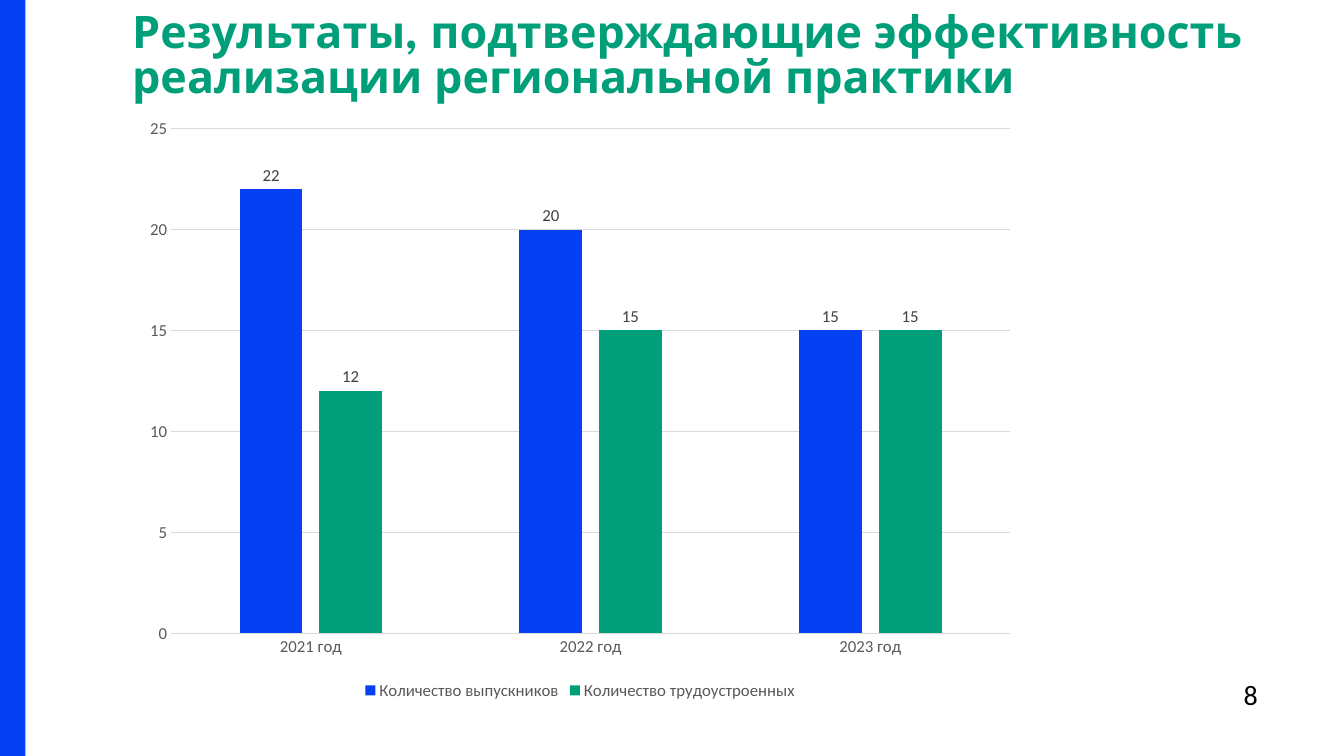
from dataclasses import dataclass

from pptx import Presentation
from pptx import util as u
from pptx.chart.data import CategoryChartData
from pptx.dml.color import RGBColor
from pptx.enum import chart as ch, shapes, text

HUES = {
    "blue": "0540F2",
    "green": "009F79",
    "grid": "D9D9D9",
    "axis": "595959",
    "label": "404040",
    "black": "000000",
}
YEARS = ["2021 год", "2022 год", "2023 год"]


@dataclass
class Row:
    name: str
    vals: list[int]
    hue: str


ROWS = [
    Row("Количество выпускников", [22, 20, 15], "blue"),
    Row("Количество трудоустроенных", [12, 15, 15], "green"),
]


def tint(hue: str) -> RGBColor:
    return RGBColor.from_string(HUES[hue])


def style(font, size: float, hue: str, face: str = "Calibri", bold: bool = False) -> None:
    font.size = u.Pt(size)
    font.name = face
    font.bold = bold
    font.color.rgb = tint(hue)


def paint(fill, hue: str) -> None:
    fill.solid()
    fill.fore_color.rgb = tint(hue)


def rule(line) -> None:
    line.color.rgb = tint("grid")
    line.width = u.Pt(0.75)


def write(box, words: str, *, size: float, hue: str, face: str = "Calibri",
          bold: bool = False, wrap: bool = True, pad: float | None = None,
          lead: float | None = None) -> None:
    frame = box.text_frame
    frame.word_wrap = wrap
    frame.auto_size = text.MSO_AUTO_SIZE.NONE if wrap else text.MSO_AUTO_SIZE.SHAPE_TO_FIT_TEXT
    frame.vertical_anchor = text.MSO_ANCHOR.TOP
    if pad is not None:
        frame.margin_left = frame.margin_right = u.Cm(pad)
        frame.margin_top = frame.margin_bottom = u.Cm(pad)
    para = frame.paragraphs[0]
    para.alignment = text.PP_ALIGN.LEFT
    if lead:
        para.line_spacing = u.Pt(lead)
    run = para.add_run()
    run.text = words
    style(run.font, size, hue, face, bold)


def plot(slide, rows: list[Row]) -> None:
    data = CategoryChartData()
    data.categories = YEARS
    for row in rows:
        data.add_series(row.name, row.vals)
    chart = slide.shapes.add_chart(
        ch.XL_CHART_TYPE.COLUMN_CLUSTERED,
        u.Cm(3.33), u.Cm(2.69), u.Cm(22.58), u.Cm(15.06), data).chart
    style(chart.font, 10, "black")
    chart.has_title = False

    # Legend
    chart.has_legend = True
    chart.legend.position = ch.XL_LEGEND_POSITION.BOTTOM
    chart.legend.include_in_layout = False
    style(chart.legend.font, 12, "axis")

    # Axes
    for axis in (chart.category_axis, chart.value_axis):
        axis.major_tick_mark = axis.minor_tick_mark = ch.XL_TICK_MARK.NONE
        style(axis.tick_labels.font, 12, "axis")
    rule(chart.category_axis.format.line)
    scale = chart.value_axis
    scale.minimum_scale, scale.maximum_scale, scale.major_unit = 0, 25, 5
    scale.format.line.fill.background()
    rule(scale.major_gridlines.format.line)

    # Columns and their labels
    bars = chart.plots[0]
    bars.gap_width, bars.overlap = 219, -27
    bars.vary_by_categories = False
    for item, row in zip(bars.series, rows):
        paint(item.format.fill, row.hue)
        item.invert_if_negative = False
        tags = item.data_labels
        tags.show_value = True
        tags.position = ch.XL_LABEL_POSITION.OUTSIDE_END
        style(tags.font, 12, "label")


def main() -> None:
    deck = Presentation()
    deck.slide_width, deck.slide_height = u.Cm(33.87), u.Cm(19.05)
    slide = deck.slides.add_slide(deck.slide_layouts[5])

    # Side band
    band = slide.shapes.add_shape(
        shapes.MSO_SHAPE.RECTANGLE, 0, 0, u.Cm(0.64), deck.slide_height)
    band.shadow.inherit = False
    paint(band.fill, "blue")
    band.line.fill.background()

    # Title
    title = slide.shapes.title
    title.left, title.top = u.Cm(3.33), u.Cm(0.33)
    title.width, title.height = u.Cm(28.83), u.Cm(1.24)
    write(title, "Результаты, подтверждающие эффективность реализации региональной практики",
          size=32, hue="green", face="League Spartan", bold=True, pad=0, lead=32)

    # Chart
    plot(slide, ROWS)

    # Page number
    page = slide.shapes.add_textbox(u.Cm(31.09), u.Cm(16.94), u.Cm(1.35), u.Cm(1.12))
    write(page, "8", size=20, hue="black", wrap=False)

    deck.save("out.pptx")


if __name__ == "__main__":
    main()
